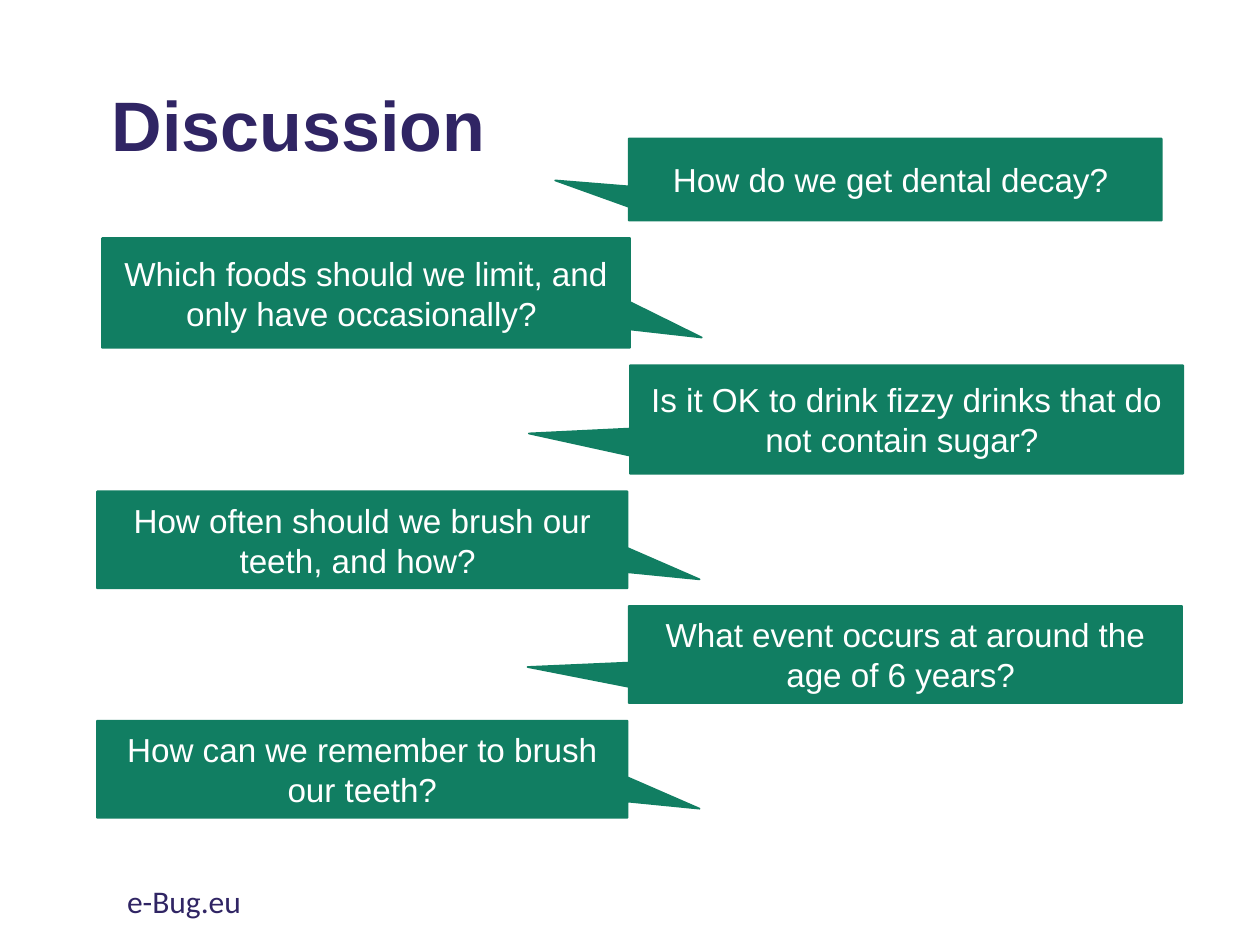
from pptx import Presentation
from pptx.dml.color import RGBColor
from pptx.enum.shapes import MSO_SHAPE
from pptx.enum.text import MSO_ANCHOR, PP_ALIGN
from pptx.util import Inches, Pt

COLUMN = Inches(10) / 100
ROW = Inches(7.5) / 75
NAVY = "302564"
GREEN = "117E62"
WHITE = "FFFFFF"
CALLOUT_GAP = 1.4

LEFT_POINTER = (-0.683, 0.129)
RIGHT_POINTER = (0.636, 0.407)
QUESTIONS = [
    ("How do we get dental decay? ", 49.9, 42.3, 6.5, (-0.638, 0.011)),
    ("Which foods should we limit, and only have occasionally? ", 8.1, 41.9, 8.7, RIGHT_POINTER),
    ("Is it OK to drink fizzy drinks that do not contain sugar? ", 50, 43.9, 8.6, LEFT_POINTER),
    ("How often should we brush our teeth, and how? ", 7.7, 42.1, 7.7, RIGHT_POINTER),
    ("What event occurs at around the age of 6 years? ", 49.9, 43.9, 7.7, LEFT_POINTER),
    ("How can we remember to brush our teeth?", 7.7, 42.1, 7.7, RIGHT_POINTER),
]


def color(hex_string):
    return RGBColor.from_string(hex_string)


def grid_box(left, top, width, height):
    return (round(left * COLUMN), round(top * ROW), round(width * COLUMN), round(height * ROW))


def write_text(shape, text, size, font_name, hex_string, bold=False,
               anchor=MSO_ANCHOR.MIDDLE, alignment=PP_ALIGN.LEFT):
    text_frame = shape.text_frame
    text_frame.text = text
    text_frame.word_wrap = True
    text_frame.vertical_anchor = anchor
    paragraph = text_frame.paragraphs[0]
    paragraph.alignment = alignment
    font = paragraph.runs[0].font
    font.size = Pt(size)
    font.name = font_name
    font.bold = bold
    font.color.rgb = color(hex_string)


def add_title(slide, box):
    title = slide.shapes.add_textbox(*box)
    write_text(title, "Discussion", 40, "Arial", NAVY, bold=True)
    title.text_frame.paragraphs[0].line_spacing = 0.9


def add_callout(slide, box, question, pointer):
    callout = slide.shapes.add_shape(MSO_SHAPE.RECTANGULAR_CALLOUT, *box)
    callout.shadow.inherit = False
    callout.adjustments[0], callout.adjustments[1] = pointer
    callout.fill.solid()
    callout.fill.fore_color.rgb = color(GREEN)
    callout.line.color.rgb = color(GREEN)
    callout.line.width = Pt(1)
    write_text(callout, question, 19, "Arial", WHITE, alignment=PP_ALIGN.CENTER)


def add_questions(slide, top):
    for question, left, width, height, pointer in QUESTIONS:
        add_callout(slide, grid_box(left, top, width, height), question, pointer)
        top += height + CALLOUT_GAP


def add_footer(slide, box):
    footer = slide.shapes.add_textbox(*box)
    write_text(footer, "e-Bug.eu", 18, "Calibri", NAVY, anchor=MSO_ANCHOR.TOP)


def main():
    presentation = Presentation()
    presentation.slide_width = Inches(10)
    presentation.slide_height = Inches(7.5)
    slide = presentation.slides.add_slide(presentation.slide_layouts[6])
    add_title(slide, grid_box(7.9, 3, 86.2, 14.5))
    add_questions(slide, 11)
    add_footer(slide, grid_box(9.1, 69.5, 33.8, 4))
    presentation.save("out.pptx")


if __name__ == "__main__":
    main()
